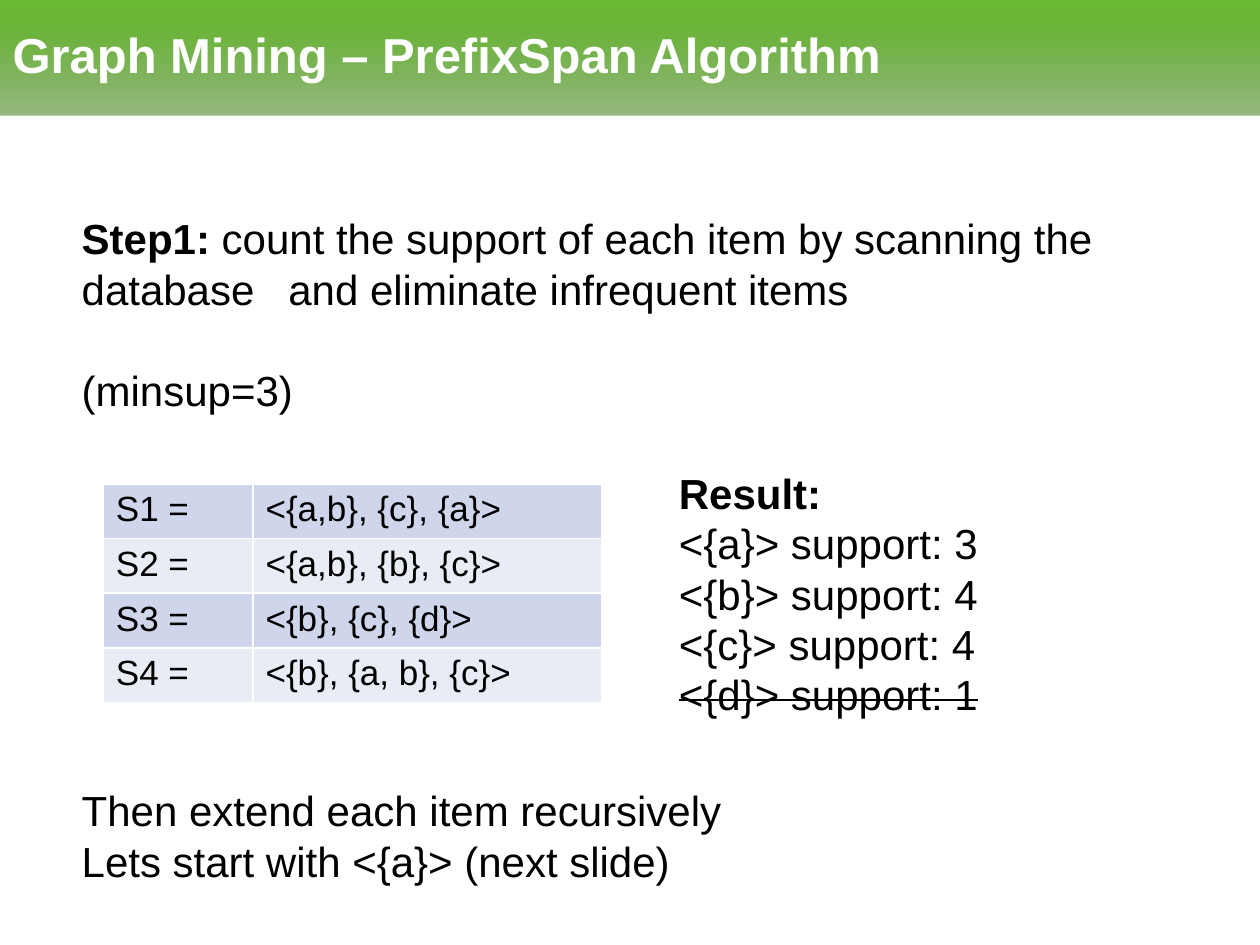
from dataclasses import dataclass

from lxml import etree
from pptx import Presentation
from pptx import util as u
from pptx.dml.color import RGBColor
from pptx.enum import text as t
from pptx.oxml import ns


@dataclass(frozen=True)
class Theme:
    font: str = "Arial"
    title_size: int = 28
    body_size: int = 24
    table_size: int = 20
    ink: str = "000000"
    white: str = "FFFFFF"
    bands: tuple = ("CFD5EA", "E9EBF5")
    # position %, colour, opacity %
    banner: tuple = ((0, "518D2A", 60), (80, "6AB636", 100), (100, "6ABA34", 100))


THEME = Theme()
TITLE = "Graph Mining – PrefixSpan Algorithm"
SEQUENCES = [
    ("S1 =", "<{a,b}, {c}, {a}>"),
    ("S2 =", "<{a,b}, {b}, {c}>"),
    ("S3 =", "<{b}, {c}, {d}>"),
    ("S4 =", "<{b}, {a, b}, {c}>"),
]
SUPPORTS = [("a", 3), ("b", 4), ("c", 4), ("d", 1)]
MIN_SUPPORT = 3


def add_child(parent, tag, **attributes):
    child = etree.SubElement(parent, ns.qn(tag))
    for name, value in attributes.items():
        child.set(name, str(value))
    return child


def write(para, words, size=THEME.body_size, color=THEME.ink, bold=False, strike=False):
    span = para.add_run()
    span.text = words
    span.font.name = THEME.font
    span.font.size = u.Pt(size)
    span.font.bold = bold
    span.font.color.rgb = RGBColor.from_string(color)
    if strike:
        span.font._element.set("strike", "sngStrike")
    return span


def place(shape, box):
    shape.left, shape.top, shape.width, shape.height = map(u.Inches, box)


def add_text_box(page, box):
    frame = page.shapes.add_textbox(*map(u.Inches, box)).text_frame
    frame.word_wrap = True
    return frame


def fill_banner(shape):
    shape.fill.gradient()
    shape.fill.gradient_angle = 90
    stops = shape._element.spPr.find(".//" + ns.qn("a:gsLst"))
    for stop in list(stops):
        stops.remove(stop)
    for position, color, opacity in THEME.banner:
        stop = add_child(stops, "a:gs", pos=position * 1000)
        tint = add_child(stop, "a:srgbClr", val=color)
        if opacity < 100:
            add_child(tint, "a:alpha", val=opacity * 1000)


def title_banner(page, box):
    title = page.shapes.title
    place(title, box)
    fill_banner(title)
    frame = title.text_frame
    frame.auto_size = t.MSO_AUTO_SIZE.NONE
    frame.vertical_anchor = t.MSO_ANCHOR.MIDDLE
    para = frame.paragraphs[0]
    para.alignment = t.PP_ALIGN.LEFT
    para.line_spacing = 0.9
    write(para, TITLE, size=THEME.title_size, color=THEME.white, bold=True)


def step_text(page, box):
    frame = add_text_box(page, box)
    para = frame.paragraphs[0]
    tabs = add_child(para._p.get_or_add_pPr(), "a:tabLst")
    add_child(tabs, "a:tab", pos=u.Inches(1.64), algn="l")
    write(para, "Step1: ", bold=True)
    write(para, "count the support of each item by scanning the database\tand eliminate infrequent items")
    para = frame.add_paragraph()
    para.space_before = u.Pt(29)
    write(para, f"(minsup={MIN_SUPPORT})")


def style_cell(cell, color):
    properties = cell._tc.get_or_add_tcPr()
    for side in ("a:lnL", "a:lnR", "a:lnT", "a:lnB"):
        line = add_child(properties, side, w=u.Pt(1))
        add_child(add_child(line, "a:solidFill"), "a:srgbClr", val=THEME.white)
    cell.fill.solid()
    cell.fill.fore_color.rgb = RGBColor.from_string(color)


def sequence_table(page, box, label_share=0.3):
    size = len(SEQUENCES), 2
    table = page.shapes.add_table(*size, *map(u.Inches, box)).table
    table.first_row = table.horz_banding = False
    width = box[2]
    table.columns[0].width = u.Inches(width * label_share)
    table.columns[1].width = u.Inches(width * (1 - label_share))
    for index, row in enumerate(SEQUENCES):
        for column, words in enumerate(row):
            cell = table.cell(index, column)
            style_cell(cell, THEME.bands[index % 2])
            write(cell.text_frame.paragraphs[0], words, size=THEME.table_size)


def result_list(page, box):
    frame = add_text_box(page, box)
    write(frame.paragraphs[0], "Result:", bold=True)
    for item, support in SUPPORTS:
        words = f"<{{{item}}}> support: {support}"
        write(frame.add_paragraph(), words, strike=support < MIN_SUPPORT)


def closing_text(page, box):
    frame = add_text_box(page, box)
    write(frame.paragraphs[0], "Then extend each item recursively")
    write(frame.add_paragraph(), "Lets start with <{a}> (next slide)")


def main():
    deck = Presentation()
    deck.slide_width, deck.slide_height = u.Inches(10), u.Inches(7.5)
    page = deck.slides.add_slide(deck.slide_layouts.get_by_name("Title Only"))
    title_banner(page, (0, 0, 10, 0.92))
    step_text(page, (0.55, 1.64, 9.19, 1.72))
    sequence_table(page, (0.82, 3.84, 3.96, 1.73))
    result_list(page, (5.29, 3.66, 3.96, 2.52))
    closing_text(page, (0.55, 6.18, 9.19, 0.91))
    deck.save("out.pptx")


if __name__ == "__main__":
    main()
